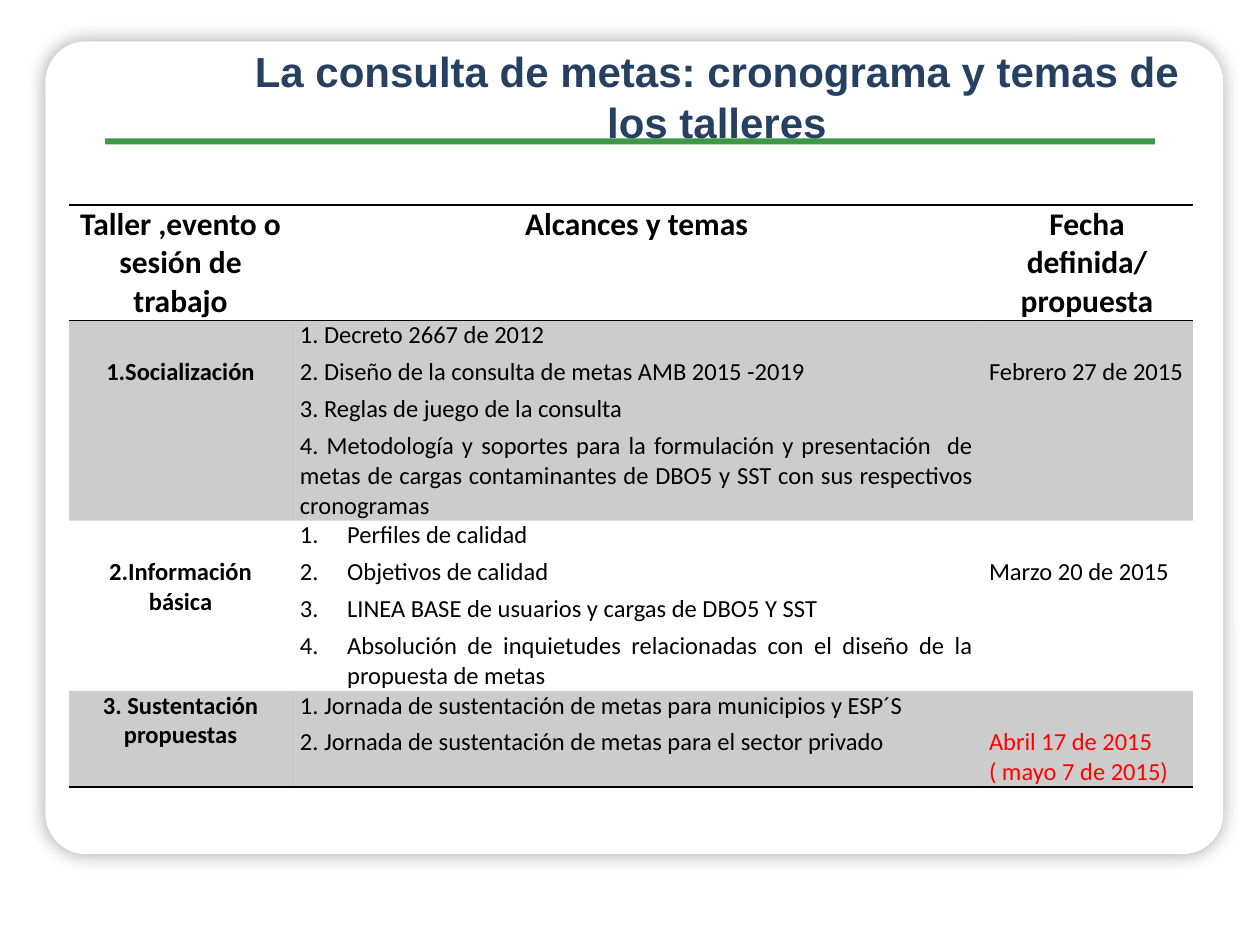
from lxml.etree import SubElement
from pptx import Presentation
from pptx.dml.color import RGBColor
from pptx.enum.shapes import MSO_SHAPE
from pptx.enum.text import MSO_ANCHOR, MSO_AUTO_SIZE, PP_ALIGN
from pptx.oxml.ns import qn
from pptx.util import Pt

COLORS = {"white": "FFFFFF", "black": "000000", "green": "3D9948",
          "navy": "254061", "red": "FF0000"}
NO_STYLE = "{2D5ABB26-0587-4C30-8999-92F81FD0307C}"
BLANK_LINE = 21  # one line of 14 pt text with its spacing


def write(frame, text, size=14, bold=False, color="black", font="Calibri",
          align=PP_ALIGN.LEFT, line=None, gap=2, numbered=False):
    """Fill a text frame, one paragraph for each line of text."""
    for index, content in enumerate(text.split("\n")):
        para = frame.add_paragraph() if index else frame.paragraphs[0]
        if numbered:
            properties = para._p.get_or_add_pPr()
            properties.set("marL", str(Pt(27)))
            properties.set("indent", str(Pt(-27)))
            SubElement(properties, qn("a:buAutoNum"), type="arabicPeriod")
        para.alignment = align
        para.space_before = Pt(gap if index else 0)
        para.space_after = Pt(gap)
        if line:
            para.line_spacing = Pt(line)
        span = para.add_run()
        span.text = content
        span.font.name = font
        span.font.size = Pt(size)
        span.font.bold = bold
        span.font.color.rgb = RGBColor.from_string(COLORS[color])


def add_border(cell, side):
    border = SubElement(cell._tc.get_or_add_tcPr(), qn(f"a:{side}"), w=str(Pt(1)))
    fill = SubElement(border, qn("a:solidFill"))
    SubElement(fill, qn("a:srgbClr"), val=COLORS["black"])


deck = Presentation()
deck.slide_width, deck.slide_height = Pt(720), Pt(540)
page = deck.slides.add_slide(deck.slide_layouts[5])

# Panel and rule
for kind, color, left, top, width, height in [
    (MSO_SHAPE.ROUNDED_RECTANGLE, "white", 26, 23.6, 673, 464.5),
    (MSO_SHAPE.RECTANGLE, "green", 60, 79, 600, 3.5),
]:
    shape = page.shapes.add_shape(kind, Pt(left), Pt(top), Pt(width), Pt(height))
    shape.shadow.inherit = False
    shape.fill.solid()
    shape.fill.fore_color.rgb = RGBColor.from_string(COLORS[color])
    shape.line.fill.background()
    if kind == MSO_SHAPE.ROUNDED_RECTANGLE:
        shape.adjustments[0] = 0.05
        effects = shape._element.spPr.find(qn("a:effectLst"))
        shadow = SubElement(effects, qn("a:outerShdw"), blurRad=str(Pt(10.8)),
                            dist="0", dir="5400000", algn="ctr", rotWithShape="0")
        shade = SubElement(shadow, qn("a:srgbClr"), val=COLORS["black"])
        SubElement(shade, qn("a:alpha"), val="35000")

# Title, brought in front of the panel
title = page.shapes.title
page.shapes._spTree.append(title._element)
title.left, title.top, title.width, title.height = Pt(137.5), Pt(22.3), Pt(544.3), Pt(65.5)
title.text_frame.word_wrap = True
title.text_frame.auto_size = MSO_AUTO_SIZE.NONE
title.text_frame.vertical_anchor = MSO_ANCHOR.TOP
write(title.text_frame, "La consulta de metas: cronograma y temas de los talleres",
      size=24, bold=True, color="navy", font="Arial", align=PP_ALIGN.CENTER,
      line=29, gap=0)

# Schedule
column_widths = [127.4, 393.8, 121]
row_heights = [65, 113, 96, 54]
headers = ["Taller ,evento o sesión de trabajo", "Alcances y temas",
           "Fecha definida/ propuesta"]
workshops = [
    ("1.Socialización",
     "1. Decreto 2667 de 2012\n"
     "2. Diseño de la consulta de metas AMB 2015 -2019\n"
     "3. Reglas de juego de la consulta\n"
     "4. Metodología y soportes para la formulación y presentación  de metas de "
     "cargas contaminantes de DBO5 y SST con sus respectivos cronogramas",
     "Febrero 27 de 2015"),
    ("2.Información básica",
     "Perfiles de calidad\n"
     "Objetivos de calidad\n"
     "LINEA BASE de usuarios y cargas de DBO5 Y SST\n"
     "Absolución de inquietudes relacionadas con el diseño de la propuesta de metas",
     "Marzo 20 de 2015"),
    ("3. Sustentación propuestas",
     "1. Jornada de sustentación de metas para municipios y ESP´S\n"
     "2. Jornada de sustentación de metas para el sector privado",
     "Abril 17 de 2015 ( mayo 7 de 2015)"),
]
last = len(workshops)
table = page.shapes.add_table(last + 1, 3, Pt(39.5), Pt(117.2),
                              Pt(sum(column_widths)), Pt(sum(row_heights))).table
table.first_row = table.horz_banding = False
table._tbl.tblPr.find(qn("a:tableStyleId")).text = NO_STYLE
for column, width in zip(table.columns, column_widths):
    column.width = Pt(width)
for row, height in zip(table.rows, row_heights):
    row.height = Pt(height)

for row, texts in enumerate([headers, *workshops]):
    for column, text in enumerate(texts):
        cell = table.cell(row, column)
        cell.margin_left = cell.margin_right = Pt(4.5)
        lowered = column == 2 and row > 0 or column == 0 and row in (1, 2)
        cell.margin_top = Pt(BLANK_LINE if lowered else 0)
        cell.margin_bottom = Pt(0)
        if row == 0:
            add_border(cell, "lnT")
        if row in (0, last):
            add_border(cell, "lnB")
        if row % 2:
            cell.fill.solid()
            cell.fill.fore_color.rgb = RGBColor.from_string(COLORS["black"])
            tint = cell._tc.tcPr.find(qn("a:solidFill")).find(qn("a:srgbClr"))
            SubElement(tint, qn("a:alpha"), val="20000")
        else:
            cell.fill.background()
        if row == 0:
            write(cell.text_frame, text, size=18, bold=True, align=PP_ALIGN.CENTER)
        elif column == 0:
            write(cell.text_frame, text, bold=True, align=PP_ALIGN.CENTER)
        elif column == 1:
            write(cell.text_frame, text, align=PP_ALIGN.JUSTIFY, numbered=row == 2)
        else:
            write(cell.text_frame, text, color="red" if row == last else "black")

deck.save("out.pptx")
